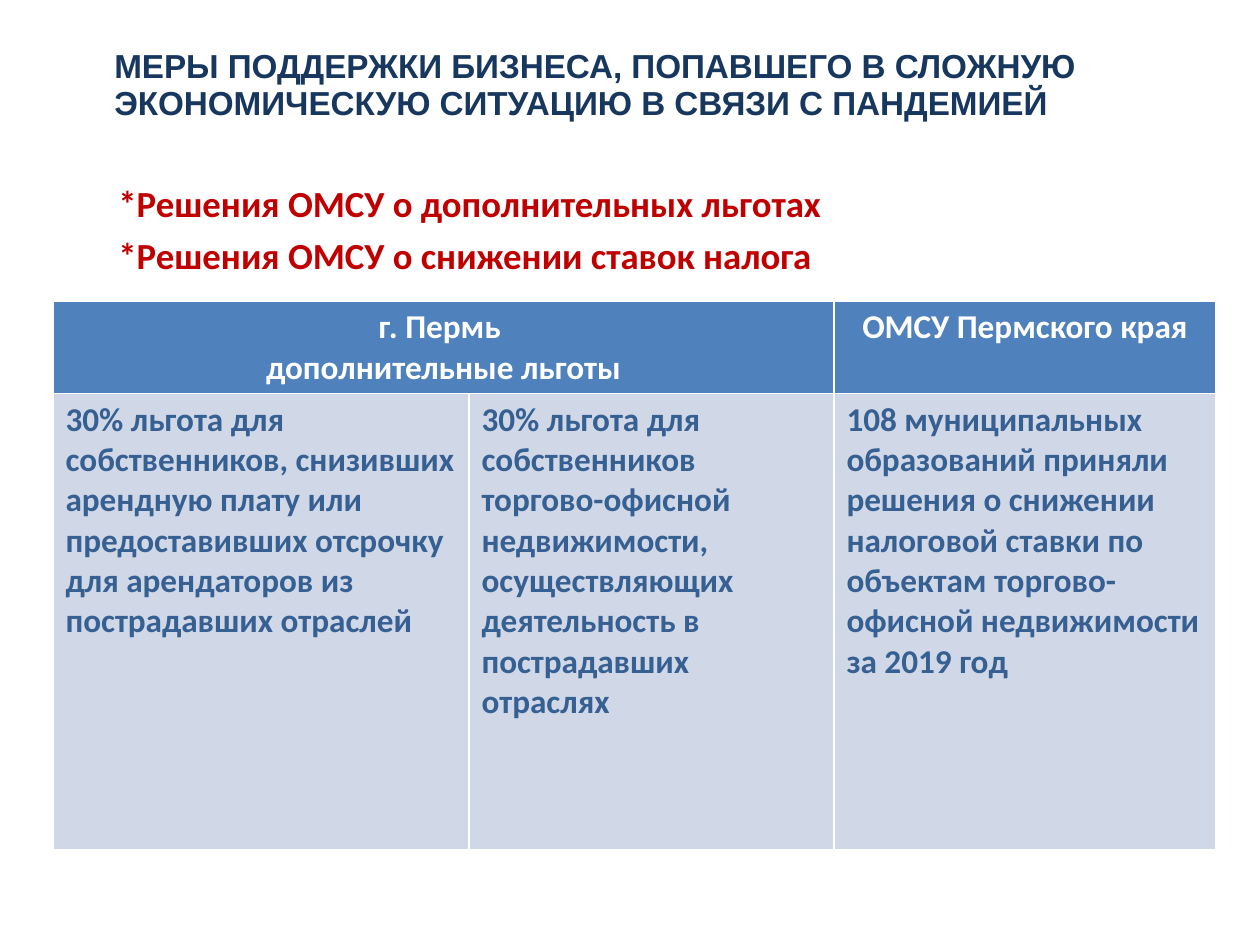
from pptx import Presentation
from pptx.dml.color import RGBColor
from pptx.enum.text import MSO_ANCHOR, PP_ALIGN
from pptx.util import Pt

TOP = MSO_ANCHOR.TOP
LEFT, CENTER = PP_ALIGN.LEFT, PP_ALIGN.CENTER
COLORS = {
    "title": "17375E",
    "accent": "C00000",
    "header": "4F81BD",
    "header_text": "FFFFFF",
    "body": "D0D8E8",
    "body_text": "376092",
}

TITLE = ["МЕРЫ ПОДДЕРЖКИ БИЗНЕСА, ПОПАВШЕГО В СЛОЖНУЮ ЭКОНОМИЧЕСКУЮ СИТУАЦИЮ В СВЯЗИ С ПАНДЕМИЕЙ"]
DECISIONS = [
    "*Решения ОМСУ о дополнительных льготах",
    "*Решения ОМСУ о снижении ставок налога",
]
HEADERS = {0: ["г. Пермь ", "дополнительные льготы"], 2: ["ОМСУ Пермского края"]}
MEASURES = [
    "30% льгота для собственников, снизивших арендную плату или предоставивших отсрочку для арендаторов из пострадавших отраслей",
    "30% льгота для собственников торгово-офисной недвижимости, осуществляющих деятельность в пострадавших отраслях",
    "108 муниципальных образований приняли решения о снижении налоговой ставки по объектам торгово-офисной недвижимости за 2019 год",
]

TITLE_BOX = (102, 42, 1158, 97)
DECISIONS_BOX = (62, 175, 1129, 712)
TABLE_LEFT, TABLE_TOP = 53, 301
COLUMN_WIDTHS = [416, 365, 382]
ROW_HEIGHTS = [92, 456]
DECISION_INDENT = 44


def px(value):
    return round(value * 914400 / 126)


def rgb(name):
    return RGBColor.from_string(COLORS[name])


def write(frame, lines, font, size, color, align=LEFT):
    for index, line in enumerate(lines):
        para = frame.paragraphs[0] if index == 0 else frame.add_paragraph()
        para.alignment = align
        span = para.add_run()
        span.text = line
        span.font.name = font
        span.font.size = Pt(size)
        span.font.bold = True
        span.font.color.rgb = rgb(color)


def add_text(page, bounds, lines, font, size, color):
    frame = page.shapes.add_textbox(*map(px, bounds)).text_frame
    frame.word_wrap = True
    frame.vertical_anchor = TOP
    write(frame, lines, font, size, color)
    return frame.paragraphs


def fill_cell(cell, lines, fill, color, align):
    cell.fill.solid()
    cell.fill.fore_color.rgb = rgb(fill)
    write(cell.text_frame, lines, "Calibri", 19, color, align)


def add_measures(page):
    size = (sum(COLUMN_WIDTHS), sum(ROW_HEIGHTS))
    bounds = map(px, (TABLE_LEFT, TABLE_TOP, *size))
    table = page.shapes.add_table(len(ROW_HEIGHTS), len(COLUMN_WIDTHS), *bounds).table
    for column, width in zip(table.columns, COLUMN_WIDTHS):
        column.width = px(width)
    for row, height in zip(table.rows, ROW_HEIGHTS):
        row.height = px(height)
    table.cell(0, 0).merge(table.cell(0, 1))
    for index, lines in HEADERS.items():
        fill_cell(table.cell(0, index), lines, "header", "header_text", CENTER)
    for index, measure in enumerate(MEASURES):
        fill_cell(table.cell(1, index), [measure], "body", "body_text", LEFT)


def main():
    deck = Presentation()
    deck.slide_width, deck.slide_height = px(1260), px(945)
    page = deck.slides.add_slide(deck.slide_layouts[6])
    for para in add_text(page, DECISIONS_BOX, DECISIONS, "Calibri", 21, "accent"):
        para.space_before = Pt(4.2)
        properties = para._p.get_or_add_pPr()
        properties.set("marL", str(px(DECISION_INDENT)))
        properties.set("indent", "0")
    for para in add_text(page, TITLE_BOX, TITLE, "Arial", 19, "title"):
        para.line_spacing = Pt(21)
    add_measures(page)
    deck.save("out.pptx")


if __name__ == "__main__":
    main()
